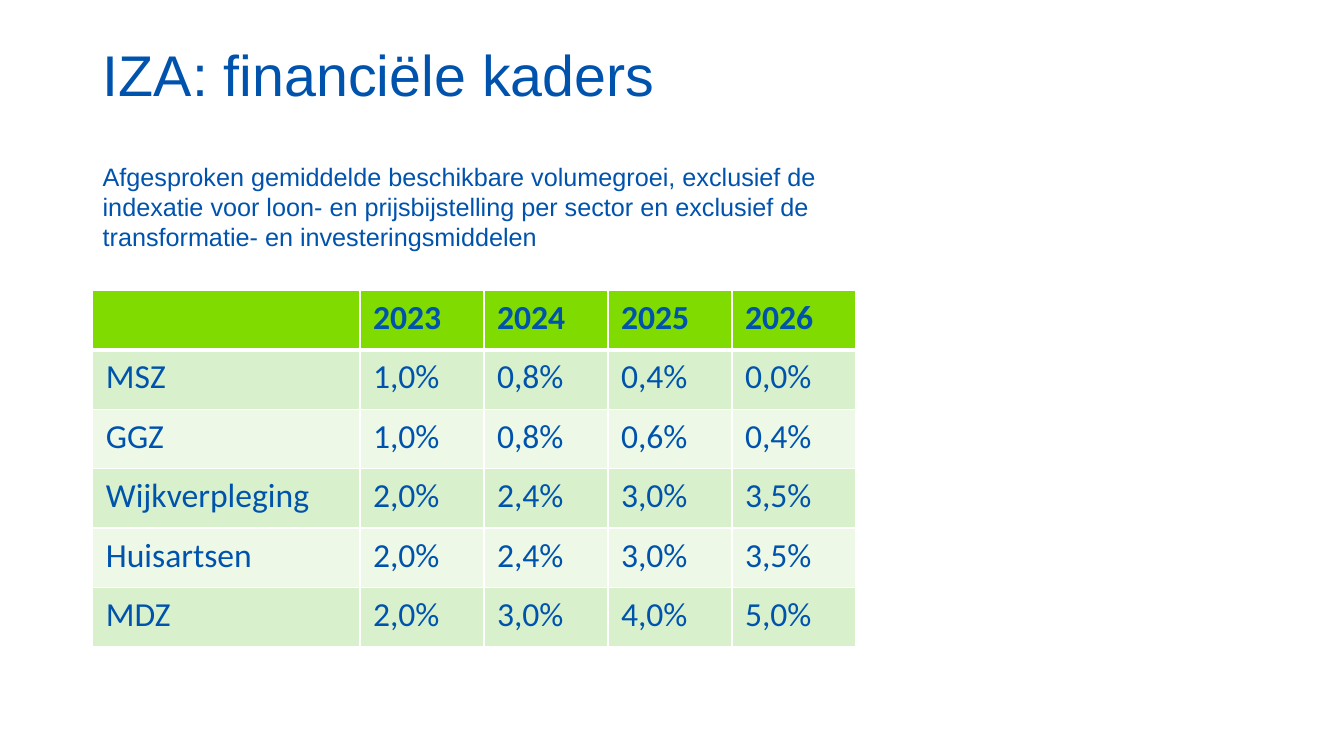
from dataclasses import dataclass

from lxml.etree import SubElement as Sub
from pptx import Presentation
from pptx.dml.color import RGBColor as Color
from pptx.enum.text import MSO_ANCHOR as Anchor
from pptx.oxml.ns import qn
from pptx.util import Inches, Pt

BLUE = Color(0x00, 0x53, 0xAD)
GREEN = Color(0x80, 0xDB, 0x00)
LIGHT = Color(0xD8, 0xF1, 0xCC)
PALE = Color(0xED, 0xF8, 0xE7)
WHITE = Color(0xFF, 0xFF, 0xFF)

LEFT = 0.92
WIDTHS = [2.65] + [1.23] * 4
HEIGHT = 0.59


@dataclass
class Row:
    name: str
    values: list[str]


ROWS = [
    Row("", ["2023", "2024", "2025", "2026"]),
    Row("MSZ", ["1,0%", "0,8%", "0,4%", "0,0%"]),
    Row("GGZ", ["1,0%", "0,8%", "0,6%", "0,4%"]),
    Row("Wijkverpleging", ["2,0%", "2,4%", "3,0%", "3,5%"]),
    Row("Huisartsen", ["2,0%", "2,4%", "3,0%", "3,5%"]),
    Row("MDZ", ["2,0%", "3,0%", "4,0%", "5,0%"]),
]


def place(shape, left: float, top: float, width: float, height: float) -> None:
    shape.left, shape.top = Inches(left), Inches(top)
    shape.width, shape.height = Inches(width), Inches(height)


def style(para, face: str, size: float, bold: bool = False) -> None:
    para.font.name = face
    para.font.size = Pt(size)
    para.font.bold = bold
    para.font.color.rgb = BLUE


def border(cell, side: str, width: float) -> None:
    props = cell._tc.get_or_add_tcPr()
    line = Sub(props, qn(f"a:ln{side}"), w=str(Pt(width)))
    fill = Sub(line, qn("a:solidFill"))
    Sub(fill, qn("a:srgbClr"), val=str(WHITE))


def draw_cell(cell, text: str, row: int) -> None:
    head = row == 0
    cell.margin_left = cell.margin_right = Inches(0.13)
    cell.margin_top = cell.margin_bottom = Inches(0.07)
    cell.text = text
    style(cell.text_frame.paragraphs[0], "Calibri", 24, head)
    for side in "LRTB":
        thick = (head and side == "B") or (row == 1 and side == "T")
        border(cell, side, 3 if thick else 1)
    cell.fill.solid()
    cell.fill.fore_color.rgb = GREEN if head else LIGHT if row % 2 else PALE


def draw_table(slide) -> None:
    frame = slide.shapes.add_table(
        len(ROWS), len(WIDTHS), Inches(LEFT), Inches(2.88),
        Inches(sum(WIDTHS)), Inches(HEIGHT * len(ROWS)))
    table = frame.table
    for col, width in zip(table.columns, WIDTHS):
        col.width = Inches(width)
    for i, row in enumerate(ROWS):
        table.rows[i].height = Inches(HEIGHT)
        for j, text in enumerate([row.name, *row.values]):
            draw_cell(table.cell(i, j), text, i)


def draw_title(slide) -> None:
    title = slide.shapes.title
    place(title, LEFT, 0.4, 11.5, 0.75)
    title.text = "IZA: financiële kaders"
    title.text_frame.vertical_anchor = Anchor.MIDDLE
    para = title.text_frame.paragraphs[0]
    Sub(para._p.get_or_add_pPr(), qn("a:buNone"))
    para._p.get_or_add_pPr().set("algn", "l")
    para.line_spacing = 0.9
    style(para, "Arial", 41)


def draw_intro(slide) -> None:
    box = slide.shapes.add_textbox(
        Inches(LEFT), Inches(1.55), Inches(7.56), Inches(1.22))
    box.text_frame.word_wrap = True
    para = box.text_frame.paragraphs[0]
    para.text = (
        "Afgesproken gemiddelde beschikbare volumegroei, exclusief de "
        "indexatie voor loon- en prijsbijstelling per sector en exclusief de "
        "transformatie- en investeringsmiddelen")
    style(para, "Arial", 18)


def main() -> None:
    deck = Presentation()
    deck.slide_width, deck.slide_height = Inches(13.33), Inches(7.5)
    slide = deck.slides.add_slide(deck.slide_layouts[5])
    draw_title(slide)
    draw_intro(slide)
    draw_table(slide)
    deck.save("out.pptx")


if __name__ == "__main__":
    main()
